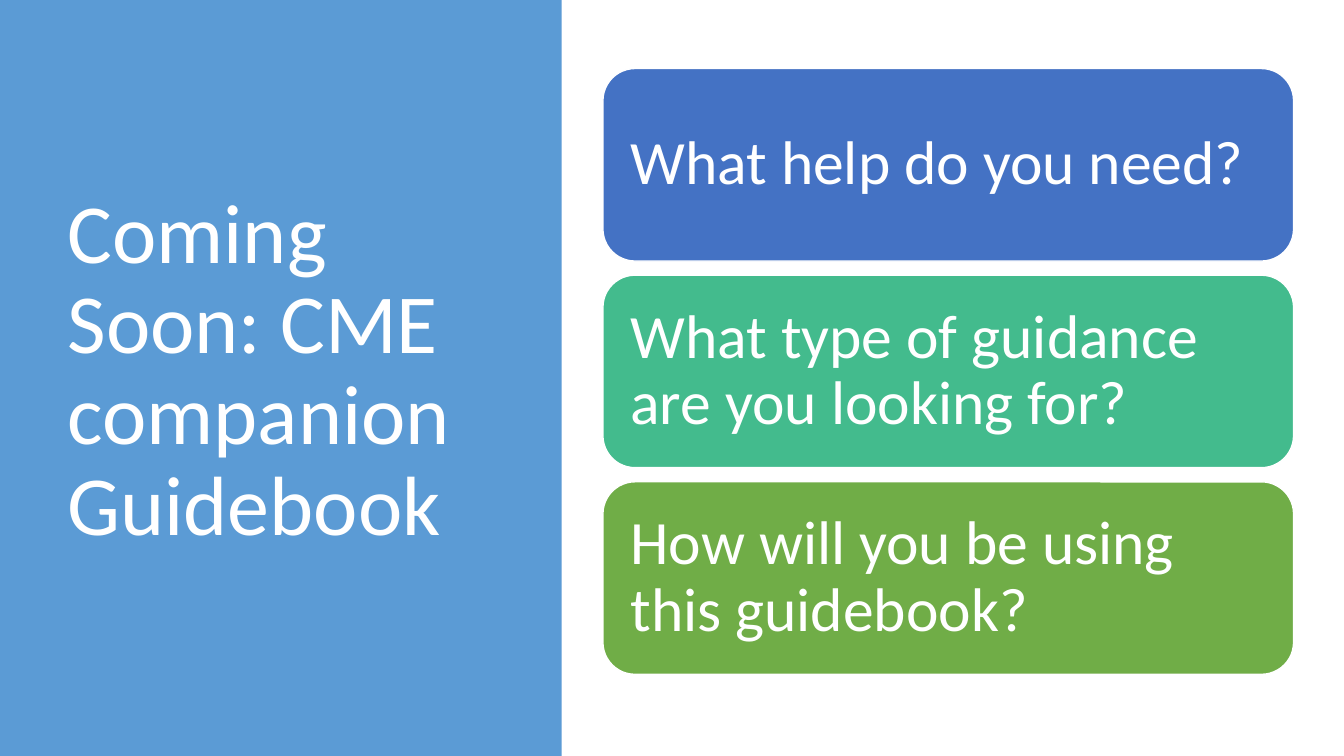
from pptx import Presentation
from pptx.dml.color import RGBColor
from pptx.enum import shapes, text
from pptx.util import Inches, Pt

TITLE = "Coming Soon: CME companion Guidebook"
QUESTIONS = [
    ("What help do you need?\u00a0", "4472C4"),
    ("What type of guidance are you looking for?\u00a0", "43BB8D"),
    ("How will you be using this guidebook?\u00a0", "70AD47"),
]
WHITE, PANEL_BLUE = "FFFFFF", "5B9BD5"
WIDTH, HEIGHT = 13.33, 7.5
PANEL_WIDTH = 5.57
TOP = 0.68
CARD_LEFT, CARD_WIDTH, CARD_HEIGHT, CARD_STEP = 5.98, 6.85, 1.91, 2.05


def color(hex_code):
    return RGBColor.from_string(hex_code)


def add_box(slide, kind, box, fill, line=None):
    shape = slide.shapes.add_shape(kind, *map(Inches, box))
    shape.shadow.inherit = False
    shape.fill.solid()
    shape.fill.fore_color.rgb = color(fill)
    if line:
        shape.line.color.rgb = color(line)
        shape.line.width = Pt(1)
    else:
        shape.line.fill.background()
    return shape


def write(shape, words, size, inset_x=0.1, inset_y=0.05):
    frame = shape.text_frame
    frame.text = words
    frame.word_wrap = True
    frame.auto_size = text.MSO_AUTO_SIZE.NONE
    frame.vertical_anchor = text.MSO_ANCHOR.MIDDLE
    frame.margin_left = frame.margin_right = Inches(inset_x)
    frame.margin_top = frame.margin_bottom = Inches(inset_y)
    paragraph = frame.paragraphs[0]
    paragraph.alignment = text.PP_ALIGN.LEFT
    paragraph.line_spacing = 0.9
    font = paragraph.runs[0].font
    font.name, font.size = "Calibri", Pt(size)
    font.color.rgb = color(WHITE)


presentation = Presentation()
presentation.slide_width, presentation.slide_height = Inches(WIDTH), Inches(HEIGHT)
slide = presentation.slides.add_slide(presentation.slide_layouts.get_by_name("Title Only"))

panel = add_box(slide, shapes.MSO_SHAPE.RECTANGLE, (0, 0, PANEL_WIDTH, HEIGHT), PANEL_BLUE)
title = slide.shapes.title
title.left, title.top, title.width, title.height = map(Inches, (0.57, TOP, 4.16, 6.02))
write(title, TITLE, 60)
title.element.addprevious(panel.element)  # the panel lies behind the title

for row, (question, fill) in enumerate(QUESTIONS):
    box = (CARD_LEFT, TOP + row * CARD_STEP, CARD_WIDTH, CARD_HEIGHT)
    card = add_box(slide, shapes.MSO_SHAPE.ROUNDED_RECTANGLE, box, fill, WHITE)
    write(card, question, 44, inset_x=0.18, inset_y=0.18)

presentation.save("out.pptx")
